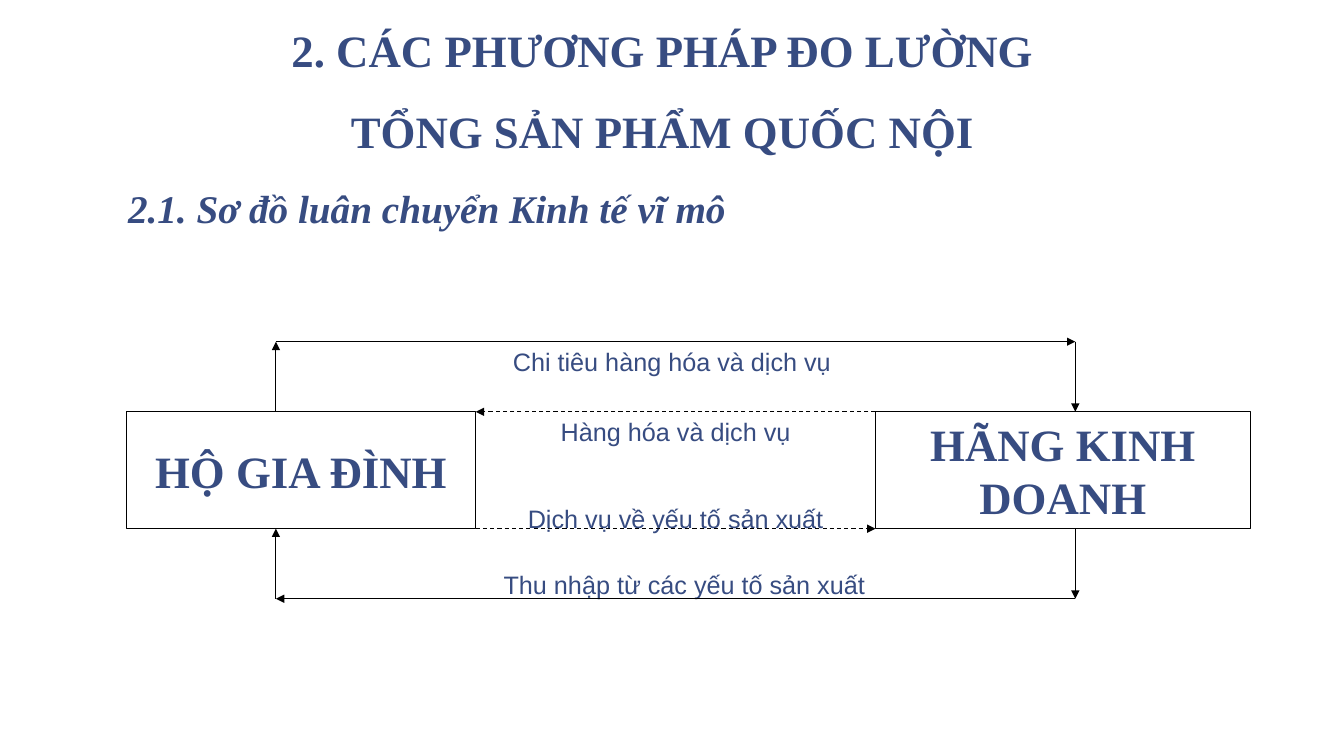
import collections
import pptx
import pptx.util
import pptx.dml.color
import pptx.enum.dml
import pptx.enum.shapes
import pptx.enum.text
import pptx.oxml.ns
import lxml.etree

Box = collections.namedtuple("Box", "left top width height")
Inches = pptx.util.Inches
Pt = pptx.util.Pt
Align = pptx.enum.text.PP_ALIGN
Anchor = pptx.enum.text.MSO_ANCHOR


class Theme:
    text = pptx.dml.color.RGBColor.from_string("374C81")
    line = pptx.dml.color.RGBColor.from_string("000000")
    line_width = Pt(0.75)
    title = {"name": "Times New Roman", "size": Pt(32), "bold": True}
    subtitle = {"name": "Times New Roman", "size": Pt(28), "bold": True, "italic": True}
    label = {"name": "Arial", "size": Pt(18)}
    heading_insets = (0.13, 0.07)
    body_insets = (0.1, 0.05)


def set_values(target, values):
    for name, value in values.items():
        setattr(target, name, value)


def write(shape, text, font, para_format, anchor=Anchor.TOP, insets=Theme.body_insets):
    side, edge = map(Inches, insets)
    frame = shape.text_frame
    set_values(frame, {
        "word_wrap": True, "vertical_anchor": anchor,
        "margin_left": side, "margin_right": side,
        "margin_top": edge, "margin_bottom": edge,
    })
    para = frame.paragraphs[0]
    para.text = text
    set_values(para, para_format)
    for span in para.runs:
        set_values(span.font, font)
        span.font.color.rgb = Theme.text


def add_text(page, box, *content, **options):
    write(page.shapes.add_textbox(*map(Inches, box)), *content, **options)


def add_headings(page, box):
    title_box = box._replace(height=1.55)
    add_text(page, title_box, "2. CÁC PHƯƠNG PHÁP ĐO LƯỜNG \vTỔNG SẢN PHẨM QUỐC NỘI ",
             Theme.title, {"alignment": Align.CENTER, "line_spacing": 1.5},
             anchor=Anchor.BOTTOM, insets=Theme.heading_insets)
    subtitle_box = Box(box.left + 0.89, box.top + 1.84, 11.11, 0.79)
    add_text(page, subtitle_box, "2.1. Sơ đồ luân chuyển Kinh tế vĩ mô",
             Theme.subtitle, {"alignment": Align.LEFT, "line_spacing": Pt(22)},
             insets=Theme.heading_insets)


def add_actor(page, box, text):
    actor = page.shapes.add_shape(
        pptx.enum.shapes.MSO_SHAPE.RECTANGLE, *map(Inches, box))
    actor.shadow.inherit = False
    actor.fill.background()
    actor.line.color.rgb = Theme.line
    actor.line.width = Theme.line_width
    write(actor, text, Theme.title, {"alignment": Align.CENTER}, anchor=Anchor.MIDDLE)


def add_arrow(page, start, end, dashed=False):
    arrow = page.shapes.add_connector(
        pptx.enum.shapes.MSO_CONNECTOR.STRAIGHT, *map(Inches, start + end))
    arrow.line.color.rgb = Theme.line
    arrow.line.width = Theme.line_width
    if dashed:
        arrow.line.dash_style = pptx.enum.dml.MSO_LINE.DASH
    qualified = pptx.oxml.ns.qn
    outline = arrow.line._get_or_add_ln()
    lxml.etree.SubElement(outline, qualified("a:tailEnd"), type="triangle")
    lxml.etree.SubElement(arrow._element.spPr, qualified("a:effectLst"))


def add_flow_diagram(page, box):
    column, row = box.width / 45, box.height / 11

    def point(x, y):
        return box.left + x * column, box.top + y * row

    def cell(x, y, columns, rows):
        return Box(*point(x, y), columns * column, rows * row)

    for text, x, y, columns in [
        ("Dịch vụ về yếu tố sản xuất", 14, 6.7, 16),
        ("Hàng hóa và dịch vụ", 15, 3, 14),
        ("Thu nhập từ các yếu tố sản xuất", 13, 9.53, 18.7),
        ("Chi tiêu hàng hóa và dịch vụ", 13, 0, 17.7),
    ]:
        add_text(page, cell(x, y, columns, 2.67), text,
                 Theme.label, {"alignment": Align.CENTER})

    add_actor(page, cell(0, 3, 14, 5), "HỘ GIA ĐÌNH")
    add_actor(page, cell(30, 3, 15, 5), "HÃNG KINH DOANH")

    add_arrow(page, point(30, 3), point(14, 3), dashed=True)
    add_arrow(page, point(14, 8), point(30, 8), dashed=True)
    income = [(38, 8), (38, 11), (6, 11), (6, 8)]
    spending = [(6, 3), (6, 0), (38, 0), (38, 3)]
    for route in (income, spending):
        for start, end in zip(route, route[1:]):
            add_arrow(page, point(*start), point(*end))


def main():
    deck = pptx.Presentation()
    deck.slide_width = Inches(13.33)
    deck.slide_height = Inches(7.5)
    page = deck.slides.add_slide(deck.slide_layouts[6])
    add_headings(page, Box(0.25, 0.08, 12.75, 2.63))
    add_flow_diagram(page, Box(1.25, 3.39, 11.15, 2.55))
    deck.save("out.pptx")


if __name__ == "__main__":
    main()
